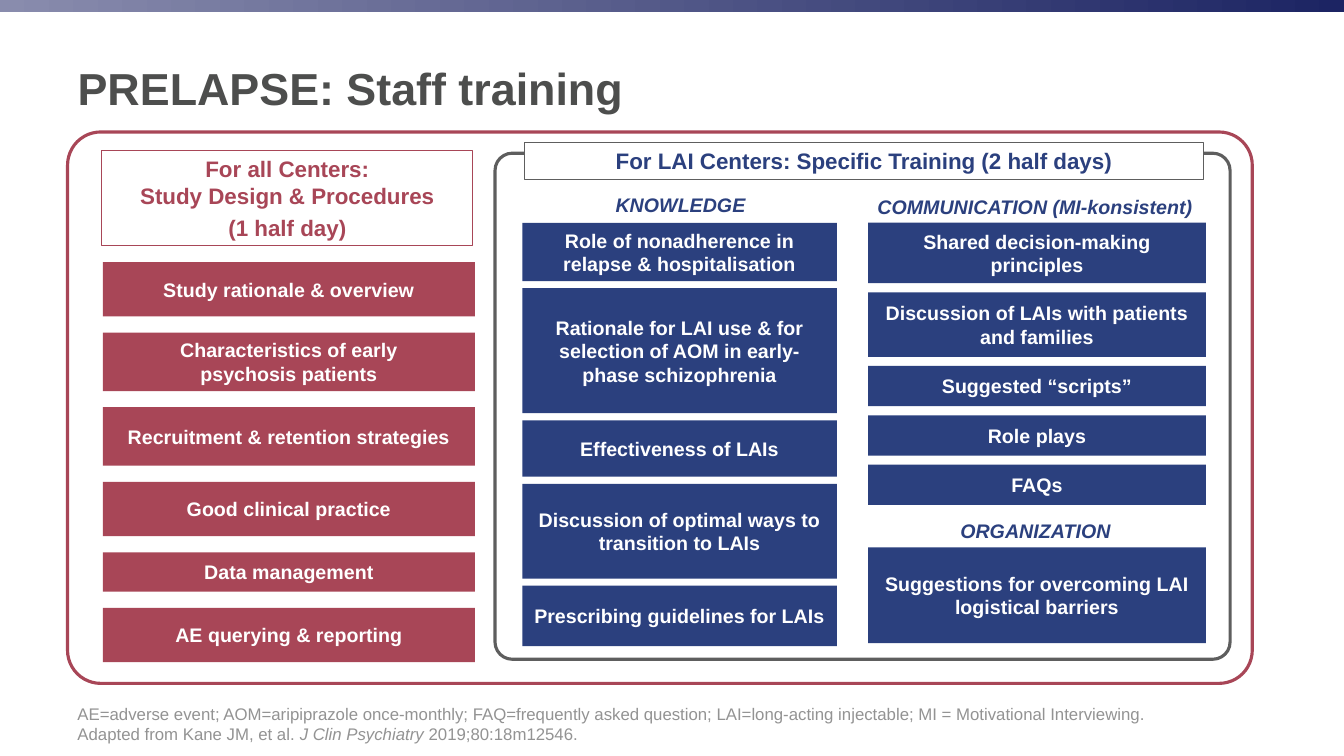
from pptx import Presentation
from pptx import util as u
from pptx.dml.color import RGBColor
from pptx.enum import shapes, text

RED = RGBColor(0xA8, 0x46, 0x57)
BLUE = RGBColor(0x2B, 0x40, 0x7E)
WHITE = RGBColor(0xFF, 0xFF, 0xFF)
DARK = RGBColor(0x4D, 0x4E, 0x4D)
GREY = RGBColor(0x5E, 0x5E, 0x5E)
PALE = RGBColor(0x93, 0x93, 0x93)
LILAC = RGBColor(0x89, 0x8C, 0xAD)
NAVY = RGBColor(0x1C, 0x24, 0x63)

MIDDLE, TOP, BOTTOM = text.MSO_ANCHOR.MIDDLE, text.MSO_ANCHOR.TOP, text.MSO_ANCHOR.BOTTOM
CENTER, LEFT = text.PP_ALIGN.CENTER, text.PP_ALIGN.LEFT
RECT, ROUND = shapes.MSO_SHAPE.RECTANGLE, shapes.MSO_SHAPE.ROUNDED_RECTANGLE

prs = Presentation()
prs.slide_width, prs.slide_height = u.Inches(13.33), u.Inches(7.5)
COL, ROW = prs.slide_width // 1333, prs.slide_height // 750  # fine layout grid
s = prs.slides.add_slide(prs.slide_layouts[5])


def write(sp, words, size=14, color=WHITE, bold=True, italic=False, align=CENTER,
          anchor=MIDDLE, before=0, after=0, spacing=None):
    """Fill a shape with text; newlines split paragraphs, underscores toggle italics."""
    tf = sp.text_frame
    tf.word_wrap, tf.vertical_anchor = True, anchor
    tf.auto_size = text.MSO_AUTO_SIZE.NONE
    for i, line in enumerate(words.split("\n")):
        p = tf.paragraphs[0] if i == 0 else tf.add_paragraph()
        p.alignment, p.line_spacing = align, spacing
        p.space_before, p.space_after = u.Pt(before), u.Pt(after)
        for j, part in enumerate(line.split("_")):
            for k, piece in enumerate(part.split("\v")):
                if k:
                    p.add_line_break()
                r = p.add_run()
                r.text = piece
                r.font.name, r.font.size, r.font.bold = "Arial", u.Pt(size), bold
                r.font.italic = italic != bool(j % 2)
                r.font.color.rgb = color


def box(kind, x, y, w, h, fill=None, line=None, weight=0.75):
    """Add a preset shape placed in grid columns and rows."""
    sp = s.shapes.add_shape(kind, x * COL, y * ROW, w * COL, h * ROW)
    sp.shadow.inherit = False
    if fill is None:
        sp.fill.background()
    else:
        sp.fill.solid()
        sp.fill.fore_color.rgb = fill
    if line is None:
        sp.line.fill.background()
    else:
        sp.line.color.rgb, sp.line.width = line, u.Pt(weight)
    return sp


# Top band and title
band = box(RECT, 0, 0, 1333, 12, NAVY)
band.fill.gradient()
band.fill.gradient_angle = 0
for stop, color, position in zip(band.fill.gradient_stops, (LILAC, NAVY), (0, 1)):
    stop.color.rgb, stop.position = color, position

title = s.shapes.title
title.left, title.top, title.width, title.height = 67 * COL, 22 * ROW, 1175 * COL, 130 * ROW
write(title, "PRELAPSE: Staff training", size=32, color=DARK, align=LEFT)

# Frames and their headings
all_frame = box(ROUND, 67, 131, 1175, 547, line=RED, weight=2.25)
all_frame.adjustments[0] = 0.06
all_head = box(RECT, 101, 149, 368, 95, WHITE, RED)
write(all_head, "For all Centers:\vStudy Design & Procedures\n(1 half day)",
      size=16, color=RED, anchor=TOP, before=3.4)

lai_frame = box(ROUND, 491, 152, 729, 502, line=GREY, weight=2.25)
lai_frame.adjustments[0] = 0.034
lai_head = box(RECT, 520, 141, 674, 37, WHITE, GREY)
write(lai_head, "For LAI Centers: Specific Training (2 half days)",
      size=16, color=BLUE, before=3.4)

# Stacks of topics: left, top, width, gap, colour, (height, topic)
stacks = [
    (102, 260, 369, 16, RED, [
        (54, "Study rationale & overview"),
        (58, "Characteristics of early\npsychosis patients"),
        (58, "Recruitment & retention strategies"),
        (54, "Good clinical practice"),
        (39, "Data management"),
        (54, "AE querying & reporting")]),
    (518, 221, 312, 7, BLUE, [
        (58, "Role of nonadherence in relapse & hospitalisation"),
        (124, "Rationale for LAI use & for selection of AOM in early-phase schizophrenia"),
        (56, "Effectiveness of LAIs"),
        (94, "Discussion of optimal ways to transition to LAIs"),
        (60, "Prescribing guidelines for LAIs")]),
    (861, 221, 335, 9, BLUE, [
        (60, "Shared decision-making principles"),
        (64, "Discussion of LAIs with patients and families"),
        (40, "Suggested “scripts”"),
        (40, "Role plays"),
        (40, "FAQs")]),
    (861, 543, 335, 0, BLUE, [
        (95, "Suggestions for overcoming LAI logistical barriers")]),
]
for x, y, w, gap, color, topics in stacks:
    for h, topic in topics:
        write(box(RECT, x, y, w, h, color), topic)
        y += h + gap

# Stack labels
for x, y, w, label in [(520, 187, 310, "KNOWLEDGE"),
                       (859, 189, 335, "COMMUNICATION (MI-konsistent)"),
                       (861, 511, 332, "ORGANIZATION")]:
    sp = s.shapes.add_textbox(x * COL, y * ROW, w * COL, 33 * ROW)
    write(sp, label, color=BLUE, italic=True, after=6, spacing=u.Pt(16))

# Abbreviations and source
note = s.shapes.add_textbox(67 * COL, 695 * ROW, 1175 * COL, 48 * ROW)
write(note, "AE=adverse event; AOM=aripiprazole once-monthly; FAQ=frequently asked question; "
      "LAI=long-acting injectable; MI = Motivational Interviewing.\v"
      "Adapted from Kane JM, et al. _J Clin Psychiatry _2019;80:18m12546.",
      size=12, color=PALE, bold=False, align=LEFT, anchor=BOTTOM)

prs.save("out.pptx")
